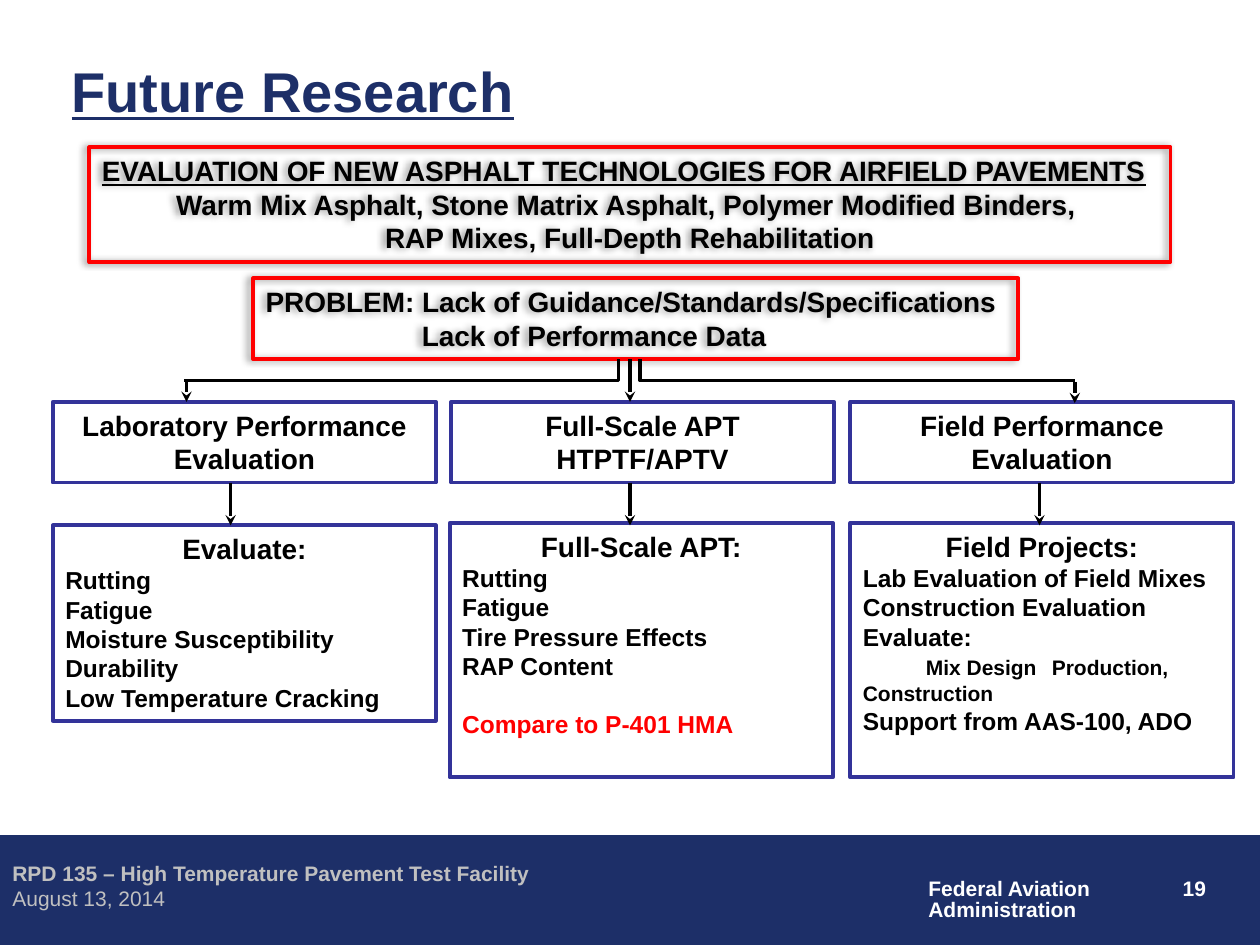
"""Build the Future Research slide: a flow from problem to three study tracks."""
from dataclasses import dataclass

from lxml.etree import SubElement
from pptx import Presentation
from pptx.dml.color import RGBColor
from pptx.enum.shapes import MSO_CONNECTOR as Link, MSO_SHAPE as Preset
from pptx.enum.text import MSO_ANCHOR as Anchor, MSO_AUTO_SIZE as AutoSize, PP_ALIGN as Align
from pptx.oxml.ns import qn
from pptx.util import Inches, Pt


@dataclass(frozen=True)
class Theme:
    font: str = "Arial"
    navy: str = "1D2F68"
    blue: str = "333399"
    red: str = "FF0000"
    black: str = "000000"
    white: str = "FFFFFF"
    silver: str = "C0C0C0"
    title: int = 32
    heading: int = 16
    body: int = 14
    small: int = 12
    border: float = 2.25
    arrow: float = 2


THEME = Theme()


@dataclass(frozen=True)
class Run:
    text: str
    size: int = THEME.heading
    color: str = THEME.black
    bold: bool = True
    underline: bool = False


@dataclass(frozen=True)
class Line:
    runs: tuple[Run, ...]
    align: Align = Align.LEFT
    indent: float = 0
    before: float = 0
    spacing: float | None = None


@dataclass(frozen=True)
class Area:
    left: float
    top: float
    width: float
    height: float

    def lengths(self) -> tuple:
        return tuple(Inches(v) for v in (self.left, self.top, self.width, self.height))


@dataclass(frozen=True)
class Card:
    area: Area
    lines: tuple[Line, ...]
    border: str = THEME.blue
    wrap: bool = True
    shadow: bool = False


@dataclass(frozen=True)
class Label:
    area: Area
    lines: tuple[Line, ...]
    wrap: bool = True
    anchor: Anchor = Anchor.TOP


@dataclass(frozen=True)
class Arrow:
    x: float
    top: float
    bottom: float


@dataclass(frozen=True)
class Elbow:
    begin_x: float
    end_x: float
    rotation: int


def heading(text: str) -> Line:
    return Line((Run(text),), Align.CENTER)


def body(text: str) -> Line:
    return Line((Run(text, THEME.body),))


def write(frame, lines: tuple[Line, ...], wrap: bool, anchor: Anchor) -> None:
    frame.word_wrap = wrap
    frame.auto_size = AutoSize.NONE
    frame.vertical_anchor = anchor
    for index, line in enumerate(lines):
        para = frame.add_paragraph() if index else frame.paragraphs[0]
        para.alignment = line.align
        if line.spacing:
            para.line_spacing = line.spacing
        if line.before:
            para.space_before = Pt(line.before)
        if line.indent:
            properties = para._p.get_or_add_pPr()
            properties.set("marL", str(Inches(line.indent)))
            properties.set("indent", "0")
        for run in line.runs:
            span = para.add_run()
            span.text = run.text
            font = span.font
            font.name, font.size = THEME.font, Pt(run.size)
            font.bold, font.underline = run.bold, run.underline
            font.color.rgb = RGBColor.from_string(run.color)


def add_shadow(box) -> None:
    effects = box._element.spPr.find(qn("a:effectLst"))
    outer = SubElement(effects, qn("a:outerShdw"), blurRad=str(Pt(4)), dist=str(Pt(3)),
                       dir=str(180 * 60000), algn="r", rotWithShape="0")
    color = SubElement(outer, qn("a:srgbClr"), val=THEME.black)
    SubElement(color, qn("a:alpha"), val="40000")


def draw_card(page, card: Card) -> None:
    box = page.shapes.add_shape(Preset.RECTANGLE, *card.area.lengths())
    box.shadow.inherit = False
    box.fill.background()
    box.line.color.rgb = RGBColor.from_string(card.border)
    box.line.width = Pt(THEME.border)
    if card.shadow:
        add_shadow(box)
    write(box.text_frame, card.lines, card.wrap, Anchor.TOP)


def draw_label(page, label: Label) -> None:
    box = page.shapes.add_textbox(*label.area.lengths())
    write(box.text_frame, label.lines, label.wrap, label.anchor)


def draw_band(page, area: Area) -> None:
    band = page.shapes.add_shape(Preset.RECTANGLE, *area.lengths())
    band.shadow.inherit = False
    band.fill.solid()
    band.fill.fore_color.rgb = band.line.color.rgb = RGBColor.from_string(THEME.navy)
    band.line.width = Pt(0.75)


def draw_connector(page, kind: Link, *ends: float):
    connector = page.shapes.add_connector(kind, *(Inches(v) for v in ends))
    connector.line.color.rgb = RGBColor.from_string(THEME.black)
    connector.line.width = Pt(THEME.arrow)
    SubElement(connector._element.spPr, qn("a:effectLst"))
    return connector


def draw_arrow(page, arrow: Arrow) -> None:
    connector = draw_connector(page, Link.STRAIGHT, arrow.x, arrow.top, arrow.x, arrow.bottom)
    SubElement(connector._element.spPr.get_or_add_ln(), qn("a:tailEnd"), type="stealth")


def draw_elbow(page, elbow: Elbow) -> None:
    connector = draw_connector(page, Link.ELBOW, elbow.begin_x, 1.21, elbow.end_x, 4.66)
    properties = connector._element.spPr
    properties.find(qn("a:xfrm")).set("rot", str(elbow.rotation * 60000))
    properties.find(qn("a:prstGeom")).set("prst", "bentConnector2")


COLUMNS = (0.42, 3.58, 6.75)
TRACKS = (("Laboratory Performance Evaluation",), ("Full-Scale APT", "HTPTF/APTV"),
          ("Field Performance Evaluation",))
TOPICS = Run("Mix Design \tProduction,\tConstruction", THEME.small)
COMPARE = Line((Run("Compare to P-401 HMA", THEME.body, THEME.red),), before=16.1)
CARDS = (
    Card(Area(0.71, 1.17, 8.58, 0.91), (
        Line((Run("EVALUATION OF NEW ASPHALT TECHNOLOGIES FOR AIRFIELD PAVEMENTS", underline=True),)),
        heading("Warm Mix Asphalt, Stone Matrix Asphalt, Polymer Modified Binders, "),
        heading("RAP Mixes, Full-Depth Rehabilitation")), THEME.red, False, True),
    Card(Area(2.01, 2.21, 6.07, 0.64), (
        Line((Run("PROBLEM: Lack of Guidance/Standards/Specifications"),)),
        Line((Run("Lack of Performance Data"),), indent=1.24)), THEME.red, False, True),
    *(Card(Area(left, 3.19, 3.04, 0.64), tuple(map(heading, track)))
      for left, track in zip(COLUMNS, TRACKS)),
    Card(Area(0.42, 4.17, 3.04, 1.55), (heading("Evaluate:"), *map(body, (
        "Rutting", "Fatigue", "Moisture Susceptibility", "Durability", "Low Temperature Cracking")))),
    Card(Area(3.57, 4.15, 3.04, 2.02), (heading("Full-Scale APT:"), *map(body, (
        "Rutting", "Fatigue", "Tire Pressure Effects", "RAP Content")), COMPARE)),
    Card(Area(6.75, 4.15, 3.04, 2.02), (heading("Field Projects:"), *map(body, (
        "Lab Evaluation of Field Mixes", "Construction Evaluation", "Evaluate:")),
        Line((Run("\t", THEME.body), TOPICS)), body("Support from AAS-100, ADO"))),
)
LABELS = (
    Label(Area(7.59, 6.9, 2.08, 0.5), (Line((Run("19", THEME.small, THEME.white),), Align.RIGHT),)),
    Label(Area(7.27, 6.93, 1.5, 0.44), tuple(
        Line((Run(text, THEME.small, THEME.white),), spacing=0.85)
        for text in ("Federal Aviation", "Administration")), wrap=False),
    Label(Area(0, 6.78, 6.44, 0.3), (
        Line((Run("RPD 135 – High Temperature Pavement Test Facility", THEME.small, THEME.silver),)),)),
    Label(Area(0, 6.98, 4.09, 0.3), (Line((Run("August 13, 2014", THEME.small, THEME.silver, False),)),)),
    Label(Area(0.47, 0.38, 9.27, 0.67), (
        Line((Run("Future Research", THEME.title, THEME.navy, underline=True),)),), anchor=Anchor.MIDDLE),
)
ELBOWS = (Elbow(6.89, 6.72, 270), Elbow(3.1, 3.27, 90))
ARROWS = (Arrow(5, 2.85, 3.19), Arrow(1.48, 3.02, 3.19), Arrow(8.53, 3.03, 3.2),
          *(Arrow(x, 3.83, 4.17) for x in (5, 8.25, 1.83)))


def main() -> None:
    deck = Presentation()
    deck.slide_width, deck.slide_height = Inches(10), Inches(7.5)
    page = deck.slides.add_slide(deck.slide_layouts[6])
    draw_band(page, Area(0, 6.63, 10, 0.87))
    for draw, items in ((draw_label, LABELS), (draw_card, CARDS),
                        (draw_elbow, ELBOWS), (draw_arrow, ARROWS)):
        for item in items:
            draw(page, item)
    deck.save("out.pptx")


if __name__ == "__main__":
    main()
